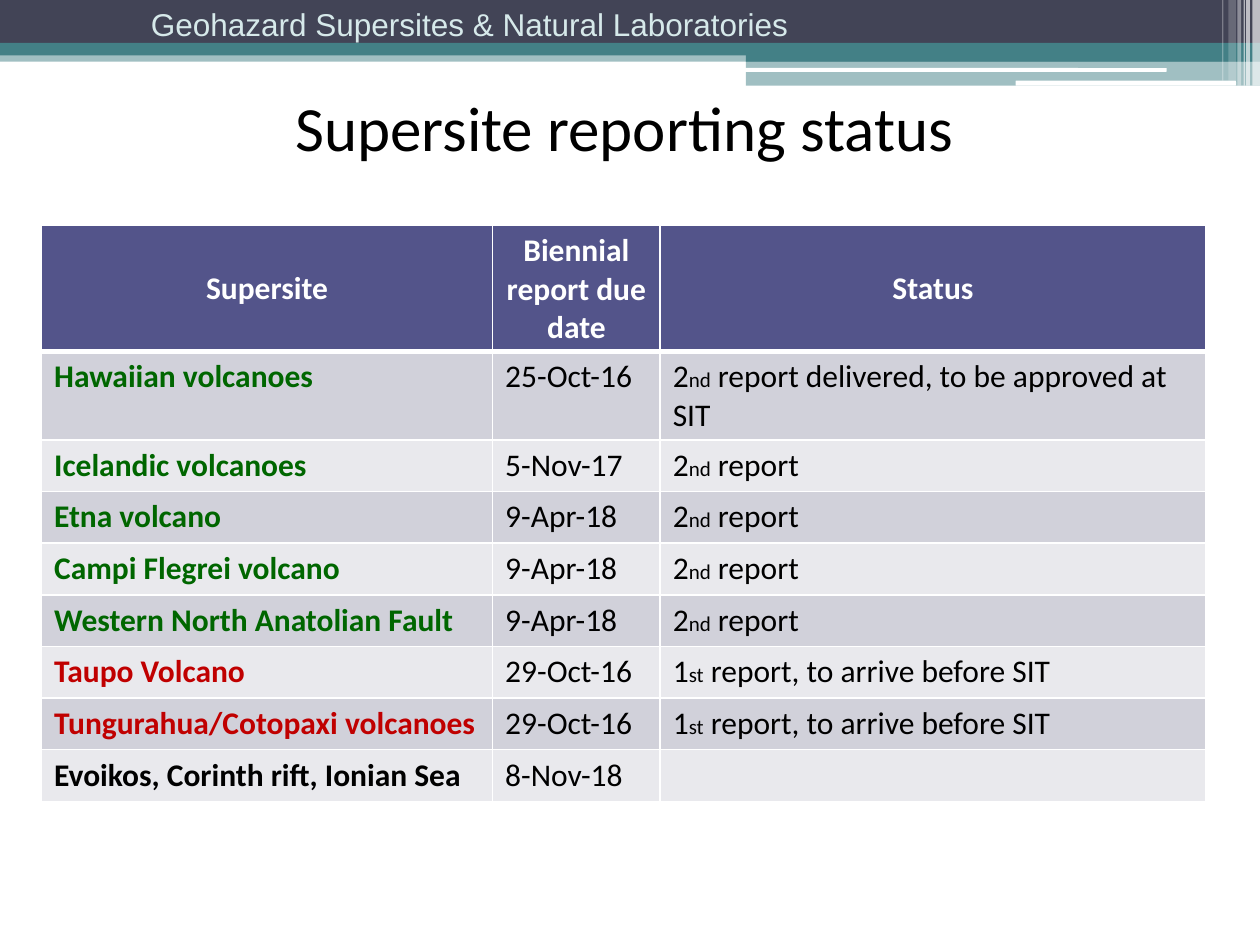
from dataclasses import dataclass
from typing import Any

from pptx import Presentation
from pptx.dml.color import RGBColor
from pptx.enum.shapes import MSO_SHAPE
from pptx.enum.text import MSO_ANCHOR, PP_ALIGN
from pptx.oxml import parse_xml
from pptx.oxml.ns import nsdecls
from pptx.util import Inches, Pt


@dataclass(frozen=True)
class Theme:
    navy: str = "424456"
    teal: str = "438086"
    white: str = "FFFFFF"
    black: str = "000000"
    pale: str = "D6E9EA"
    header: str = "53548A"
    odd: str = "D1D1DA"
    even: str = "E9E9ED"
    green: str = "006600"
    red: str = "C00000"
    sans: str = "Arial"
    body: str = "Calibri"
    title_size: int = 36
    text_size: int = 18
    ordinal_size: int = 12


T = Theme()


@dataclass(frozen=True)
class Bar:
    left: float
    top: float
    width: float
    height: float
    color: str
    alpha: int = 100
    rounded: bool = False


@dataclass(frozen=True)
class Site:
    name: str
    color: str
    due: str
    status: tuple[str, ...] = ()


BARS = [
    Bar(0, 0.4, 10, 0.09, T.teal, 50),
    Bar(0, 0, 10, 0.34, T.navy),
    Bar(0, 0.34, 10, 0.1, T.teal),
    Bar(5.92, 0.39, 4.08, 0.1, T.teal),
    Bar(5.92, 0.48, 4.08, 0.2, T.teal, 50),
    Bar(5.91, 0.54, 3.35, 0.03, T.white, rounded=True),
    Bar(8.06, 0.64, 1.75, 0.04, T.white, rounded=True),
    Bar(9.94, 0, 0.06, 0.68, T.white, 65),
    Bar(9.89, 0, 0.03, 0.68, T.white, 65),
    Bar(9.87, 0, 0.01, 0.68, T.white, 60),
    Bar(9.82, 0, 0.03, 0.68, T.white, 40),
    Bar(9.75, 0, 0.06, 0.64, T.white, 20),
    Bar(9.7, 0, 0.01, 0.64, T.white, 30),
]

SECOND = ("2", "nd", " report")
FIRST = ("1", "st", " report, to arrive before SIT")
HEADINGS = ["Supersite", "Biennial report due date", "Status"]
SITES = [
    Site("Hawaiian volcanoes", T.green, "25-Oct-16",
         ("2", "nd", " report delivered, to be approved at SIT")),
    Site("Icelandic volcanoes", T.green, "5-Nov-17", SECOND),
    Site("Etna volcano", T.green, "9-Apr-18", SECOND),
    Site("Campi Flegrei volcano", T.green, "9-Apr-18", SECOND),
    Site("Western North Anatolian Fault", T.green, "9-Apr-18", SECOND),
    Site("Taupo Volcano", T.red, "29-Oct-16", FIRST),
    Site("Tungurahua/Cotopaxi volcanoes", T.red, "29-Oct-16", FIRST),
    Site("Evoikos, Corinth rift, Ionian Sea", T.black, "8-Nov-18"),
]
COLUMNS = [3.58, 1.33, 4.33]
ROWS = [0.98, 0.69] + [0.41] * 7


def add_run(p: Any, text: str, color: str = T.black, size: int = T.text_size,
            font: str = T.body, bold: bool = False) -> None:
    r = p.add_run()
    r.text = text
    for key, value in {"name": font, "size": Pt(size), "bold": bold}.items():
        setattr(r.font, key, value)
    r.font.color.rgb = RGBColor.from_string(color)


def place(sp: Any, left: float, top: float, width: float, height: float) -> None:
    box = {"left": left, "top": top, "width": width, "height": height}
    for key, value in box.items():
        setattr(sp, key, Inches(value))


def add_bar(s: Any, bar: Bar) -> None:
    kind = MSO_SHAPE.ROUNDED_RECTANGLE if bar.rounded else MSO_SHAPE.RECTANGLE
    sp = s.shapes.add_shape(kind, 0, 0, 0, 0)
    place(sp, bar.left, bar.top, bar.width, bar.height)
    sp.shadow.inherit = False
    sp.line.fill.background()
    sp.fill.solid()
    sp.fill.fore_color.rgb = RGBColor.from_string(bar.color)
    if bar.alpha < 100:
        alpha = parse_xml(f'<a:alpha {nsdecls("a")} val="{bar.alpha * 1000}"/>')
        sp.fill._xPr.solidFill[0].append(alpha)


def style_cell(cell: Any, fill: str, top: int = 1, bottom: int = 1) -> None:
    tcPr = cell._tc.get_or_add_tcPr()
    for side, width in {"L": 1, "R": 1, "T": top, "B": bottom}.items():
        tcPr.append(parse_xml(
            f'<a:ln{side} {nsdecls("a")} w="{Pt(width)}"><a:solidFill>'
            f'<a:srgbClr val="{T.white}"/></a:solidFill></a:ln{side}>'))
    cell.fill.solid()
    cell.fill.fore_color.rgb = RGBColor.from_string(fill)


def add_title(s: Any) -> None:
    sp = s.shapes.title
    place(sp, 0.33, 0.5, 9.25, 1)
    tf = sp.text_frame
    tf.vertical_anchor = MSO_ANCHOR.MIDDLE
    p = tf.paragraphs[0]
    p.alignment = PP_ALIGN.CENTER
    add_run(p, "Supersite reporting status", size=T.title_size)


def add_banner(s: Any) -> None:
    sp = s.shapes.add_textbox(Inches(1.1), Inches(-0.01), Inches(5.43), Inches(0.4))
    sp.text_frame.word_wrap = False
    add_run(sp.text_frame.paragraphs[0], "Geohazard Supersites & Natural Laboratories",
            T.pale, font=T.sans)


def add_status_table(s: Any) -> None:
    frame = s.shapes.add_table(len(ROWS), len(COLUMNS), Inches(0.33), Inches(1.79),
                               Inches(sum(COLUMNS)), Inches(sum(ROWS)))
    table = frame.table
    for column, width in zip(table.columns, COLUMNS):
        column.width = Inches(width)
    for row, height in zip(table.rows, ROWS):
        row.height = Inches(height)
    for col, heading in enumerate(HEADINGS):
        cell = table.cell(0, col)
        style_cell(cell, T.header, bottom=3)
        cell.vertical_anchor = MSO_ANCHOR.MIDDLE
        p = cell.text_frame.paragraphs[0]
        p.alignment = PP_ALIGN.CENTER
        add_run(p, heading, T.white, bold=True)
    for row, site in enumerate(SITES, 1):
        cells = [table.cell(row, col) for col in range(len(COLUMNS))]
        for cell in cells:
            style_cell(cell, T.odd if row % 2 else T.even, top=3 if row == 1 else 1)
        name, due, status = [cell.text_frame.paragraphs[0] for cell in cells]
        add_run(name, site.name, site.color, bold=True)
        add_run(due, site.due)
        sizes = (T.text_size, T.ordinal_size, T.text_size)
        for text, size in zip(site.status, sizes):
            add_run(status, text, size=size)


def main() -> None:
    prs = Presentation()
    prs.slide_width, prs.slide_height = Inches(10), Inches(7.5)
    s = prs.slides.add_slide(prs.slide_layouts[5])
    for bar in BARS:
        add_bar(s, bar)
    add_banner(s)
    add_title(s)
    add_status_table(s)
    prs.save("out.pptx")


if __name__ == "__main__":
    main()
